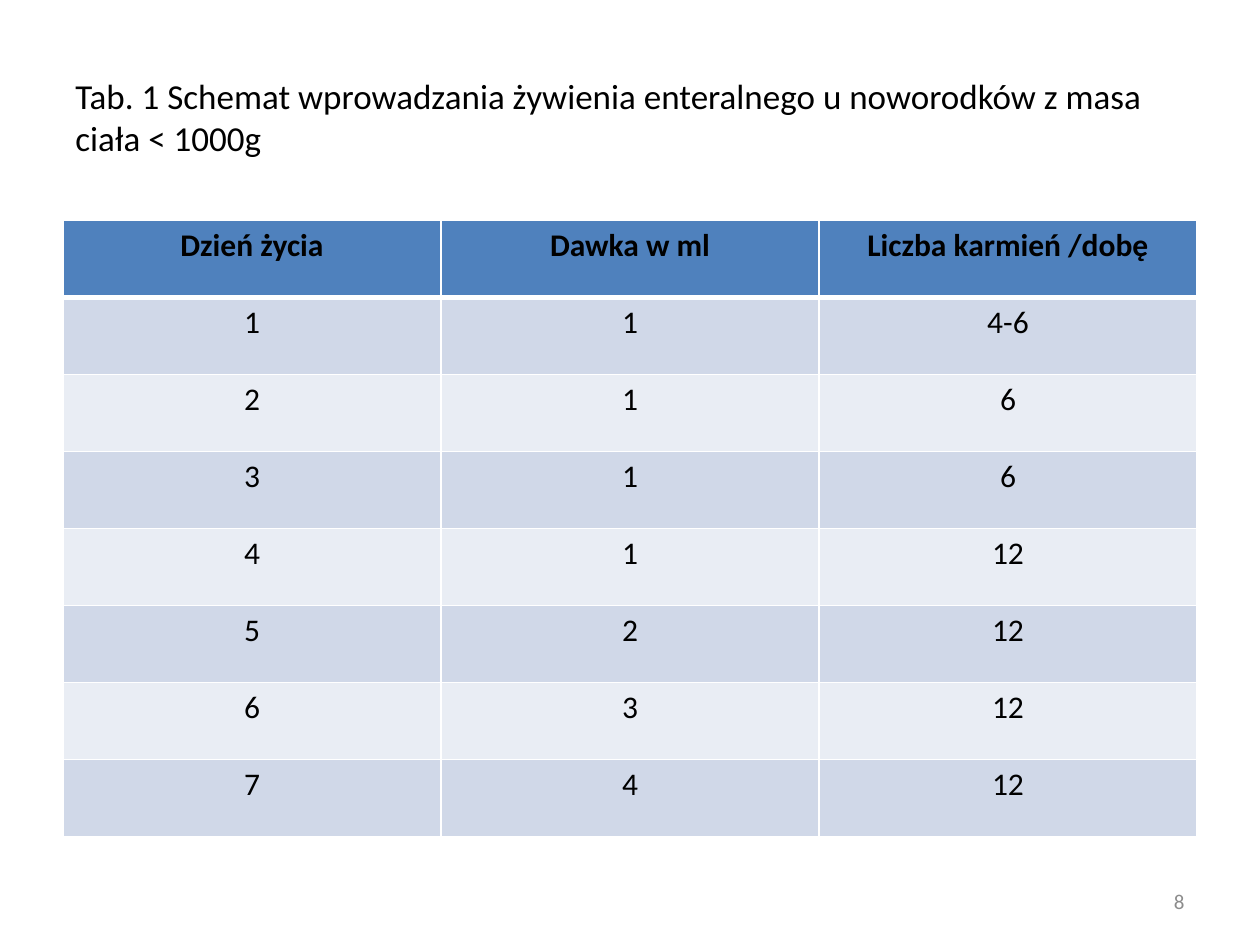
from dataclasses import dataclass

from lxml import etree
from pptx import Presentation
from pptx.dml.color import RGBColor
from pptx.enum.text import MSO_ANCHOR, PP_ALIGN
from pptx.oxml.ns import qn
from pptx.slide import Slide
from pptx.table import _Cell
from pptx.text.text import _Paragraph
from pptx.util import Pt

LEFT, CENTER, RIGHT = PP_ALIGN.LEFT, PP_ALIGN.CENTER, PP_ALIGN.RIGHT
MIDDLE = MSO_ANCHOR.MIDDLE
FONT = "Calibri"
COLORS = {
    "text": "000000",
    "number": "8C8C8C",
    "header": "4F81BD",
    "odd": "D0D8E8",
    "even": "E9EDF4",
    "border": "FFFFFF",
}
COLUMN_WIDTH, ROW_HEIGHT = 216, 44
ROWS = [
    ("Dzień życia", "Dawka w ml", "Liczba karmień /dobę"),
    ("1", "1", "4-6"),
    ("2", "1", "6"),
    ("3", "1", "6"),
    ("4", "1", "12"),
    ("5", "2", "12"),
    ("6", "3", "12"),
    ("7", "4", "12"),
]


@dataclass
class Label:
    text: str
    left: float
    top: float
    width: float
    height: float
    size: float
    color: str
    alignment: PP_ALIGN


LABELS = [
    Label(
        "Tab. 1 Schemat wprowadzania żywienia enteralnego u noworodków z masa ciała < 1000g",
        36, 21.6, 648, 90, 20, "text", LEFT,
    ),
    Label("8", 516, 500.4, 168, 28.8, 12, "number", RIGHT),
]


def write(paragraph: _Paragraph, text: str, size: float, color: str,
          alignment: PP_ALIGN, bold: bool = False) -> None:
    paragraph.alignment = alignment
    run = paragraph.add_run()
    run.text = text
    run.font.name = FONT
    run.font.size = Pt(size)
    run.font.bold = bold
    run.font.color.rgb = RGBColor.from_string(COLORS[color])


def add_label(slide: Slide, label: Label) -> None:
    box = slide.shapes.add_textbox(
        Pt(label.left), Pt(label.top), Pt(label.width), Pt(label.height)
    )
    frame = box.text_frame
    frame.word_wrap = True
    frame.vertical_anchor = MIDDLE
    write(frame.paragraphs[0], label.text, label.size, label.color, label.alignment)


def set_borders(cell: _Cell, top: float, bottom: float) -> None:
    properties = cell._tc.get_or_add_tcPr()
    for side, width in (("L", 1), ("R", 1), ("T", top), ("B", bottom)):
        line = etree.SubElement(properties, qn(f"a:ln{side}"), w=str(Pt(width)))
        fill = etree.SubElement(line, qn("a:solidFill"))
        etree.SubElement(fill, qn("a:srgbClr"), val=COLORS["border"])


def add_feeding_table(slide: Slide) -> None:
    column_count = len(ROWS[0])
    table = slide.shapes.add_table(
        len(ROWS), column_count, Pt(36), Pt(126),
        Pt(COLUMN_WIDTH * column_count), Pt(ROW_HEIGHT * len(ROWS)),
    ).table
    for row_index, values in enumerate(ROWS):
        is_header = row_index == 0
        fill_name = "header" if is_header else ("even", "odd")[row_index % 2]
        for column_index, value in enumerate(values):
            cell = table.cell(row_index, column_index)
            set_borders(cell, 3 if row_index == 1 else 1, 3 if is_header else 1)
            cell.fill.solid()
            cell.fill.fore_color.rgb = RGBColor.from_string(COLORS[fill_name])
            write(cell.text_frame.paragraphs[0], value, 18, "text", CENTER, is_header)


def main() -> None:
    """Build the slide with the enteral feeding schedule."""
    presentation = Presentation()
    presentation.slide_width, presentation.slide_height = Pt(720), Pt(540)
    slide = presentation.slides.add_slide(presentation.slide_layouts[6])
    for label in LABELS:
        add_label(slide, label)
    add_feeding_table(slide)
    presentation.save("out.pptx")


if __name__ == "__main__":
    main()
